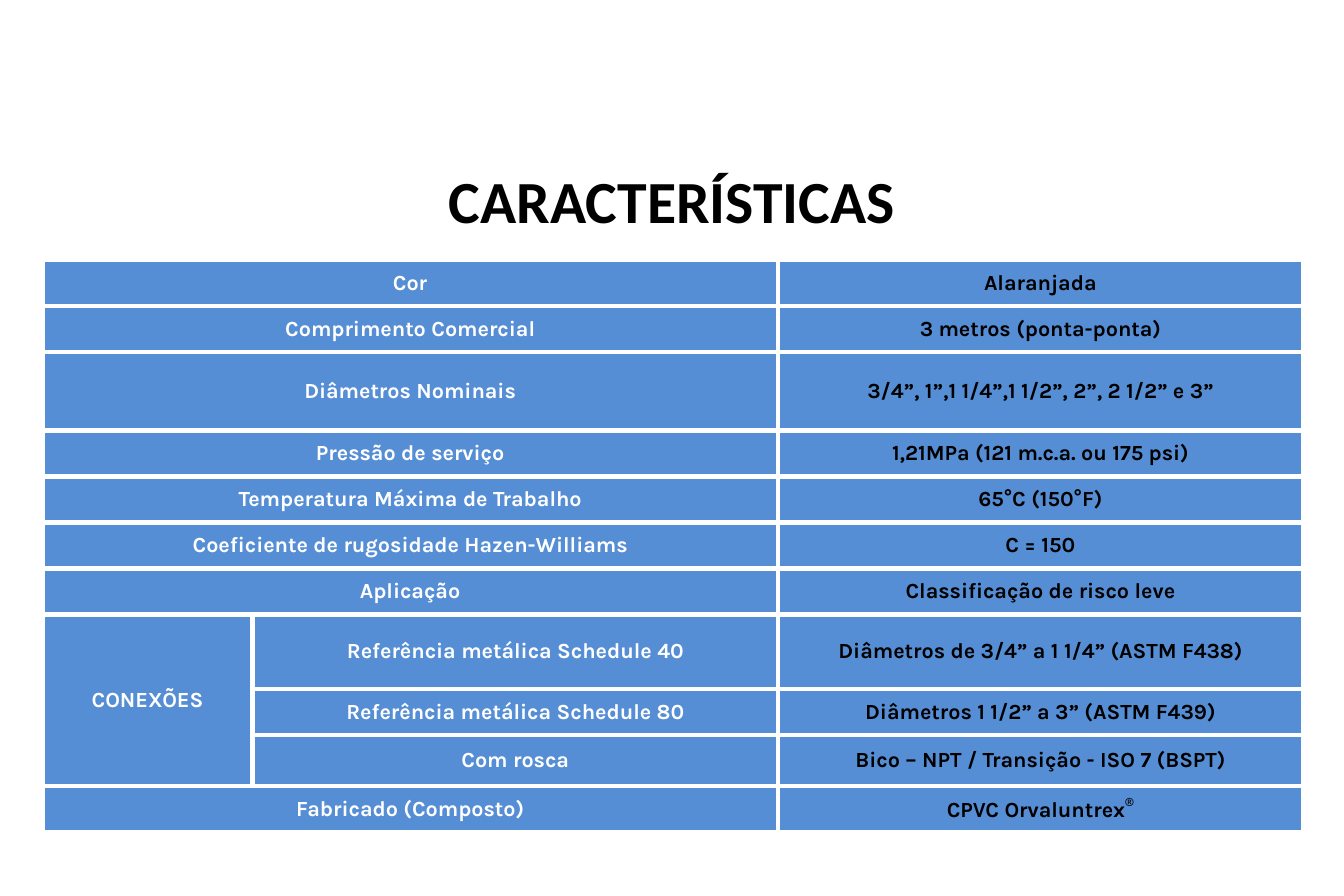
from dataclasses import dataclass

from lxml import etree
from pptx import Presentation
from pptx.dml.color import RGBColor
from pptx.enum.text import MSO_ANCHOR, MSO_AUTO_SIZE, PP_ALIGN
from pptx.oxml.ns import qn
from pptx.util import Pt

PX = 9525
CENTER = PP_ALIGN.CENTER
TOP = MSO_ANCHOR.TOP
MIDDLE = MSO_ANCHOR.MIDDLE
NO_FIT = MSO_AUTO_SIZE.NONE


@dataclass(frozen=True)
class Theme:
    title_font: str = "Calibri"
    table_font: str = "Karla"
    title_size: int = 36
    table_size: int = 13
    border_width: int = 3
    dark: str = "000000"
    light: str = "FFFFFF"
    cell: str = "558ED5"


THEME = Theme()

COLUMNS = [169, 422, 422]
ROW = 37
TALL_ROWS = {2: 63, 7: 60, 9: 41}
FITTINGS = "CONEXÕES"
ROWS = [
    ("Cor", "Alaranjada"),
    ("Comprimento Comercial", "3 metros (ponta-ponta)"),
    ("Diâmetros Nominais", "3/4”, 1”,1 1/4”,1 1/2”, 2”, 2 1/2” e 3”"),
    ("Pressão de serviço", "1,21MPa (121 m.c.a. ou 175 psi)"),
    ("Temperatura Máxima de Trabalho", "65°C (150°F)"),
    ("Coeficiente de rugosidade Hazen-Williams", "C = 150"),
    ("Aplicação", "Classificação de risco leve"),
    ("Referência metálica Schedule 40", "Diâmetros de 3/4” a 1 1/4” (ASTM F438)"),
    ("Referência metálica Schedule 80", "Diâmetros 1 1/2” a 3” (ASTM F439)"),
    ("Com rosca", "Bico – NPT / Transição - ISO 7 (BSPT)"),
    ("Fabricado (Composto)", "CPVC Orvaluntrex"),
]
FIRST_FITTING, LAST_FITTING = 7, 9


def add_run(p, text, font, size, color):
    r = p.add_run()
    r.text = text
    r.font.name = font
    r.font.size = Pt(size)
    r.font.bold = True
    r.font.color.rgb = RGBColor.from_string(color)
    return r


def add_title(s, text, left, top, width, height):
    sp = s.shapes.title
    sp.left, sp.top, sp.width, sp.height = (
        n * PX for n in (left, top, width, height)
    )
    tf = sp.text_frame
    tf.word_wrap = True
    tf.auto_size = NO_FIT
    tf.vertical_anchor = TOP
    p = tf.paragraphs[0]
    p.alignment = CENTER
    add_run(p, text, THEME.title_font, THEME.title_size, THEME.dark)


def style_cell(cell):
    tcPr = cell._tc.get_or_add_tcPr()
    for side in ("a:lnL", "a:lnR", "a:lnT", "a:lnB"):
        ln = etree.SubElement(tcPr, qn(side), w=str(Pt(THEME.border_width)))
        fill = etree.SubElement(ln, qn("a:solidFill"))
        etree.SubElement(fill, qn("a:srgbClr"), val=THEME.light)
    cell.fill.solid()
    cell.fill.fore_color.rgb = RGBColor.from_string(THEME.cell)
    cell.vertical_anchor = MIDDLE


def write_cell(cell, text, color):
    p = cell.text_frame.paragraphs[0]
    p.alignment = CENTER
    add_run(p, text, THEME.table_font, THEME.table_size, color)
    return p


def add_superscript(p, text):
    r = add_run(p, text, THEME.table_font, THEME.table_size, THEME.dark)
    r._r.get_or_add_rPr().set("baseline", "50000")


def add_features_table(s, left, top):
    heights = [TALL_ROWS.get(i, ROW) for i in range(len(ROWS))]
    table = s.shapes.add_table(
        len(ROWS), len(COLUMNS), left * PX, top * PX,
        sum(COLUMNS) * PX, sum(heights) * PX,
    ).table
    table.first_row = False
    table.horz_banding = False
    for column, width in zip(table.columns, COLUMNS):
        column.width = width * PX
    for row, height in zip(table.rows, heights):
        row.height = height * PX
    for cell in table.iter_cells():
        style_cell(cell)

    for i, (label, value) in enumerate(ROWS):
        is_fitting = FIRST_FITTING <= i <= LAST_FITTING
        if not is_fitting:
            table.cell(i, 0).merge(table.cell(i, 1))
        write_cell(table.cell(i, int(is_fitting)), label, THEME.light)
        p = write_cell(table.cell(i, 2), value, THEME.dark)
    add_superscript(p, "®")

    fittings = table.cell(FIRST_FITTING, 0)
    fittings.merge(table.cell(LAST_FITTING, 0))
    write_cell(fittings, FITTINGS, THEME.light)


def main():
    prs = Presentation()
    prs.slide_width = 1080 * PX
    prs.slide_height = 720 * PX
    s = prs.slides.add_slide(prs.slide_layouts[5])
    add_features_table(s, 34, 209)
    add_title(s, "CARACTERÍSTICAS", 54, 127, 972, 58)
    prs.save("out.pptx")


if __name__ == "__main__":
    main()
